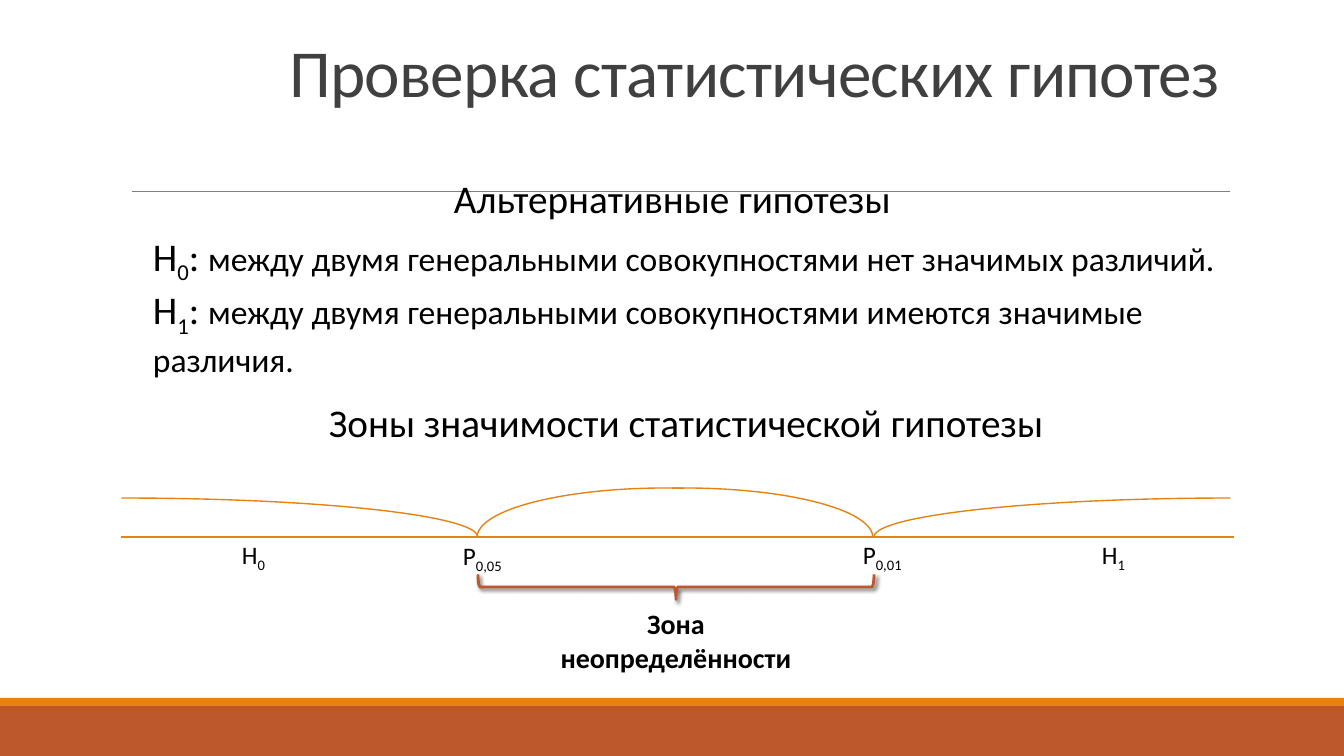
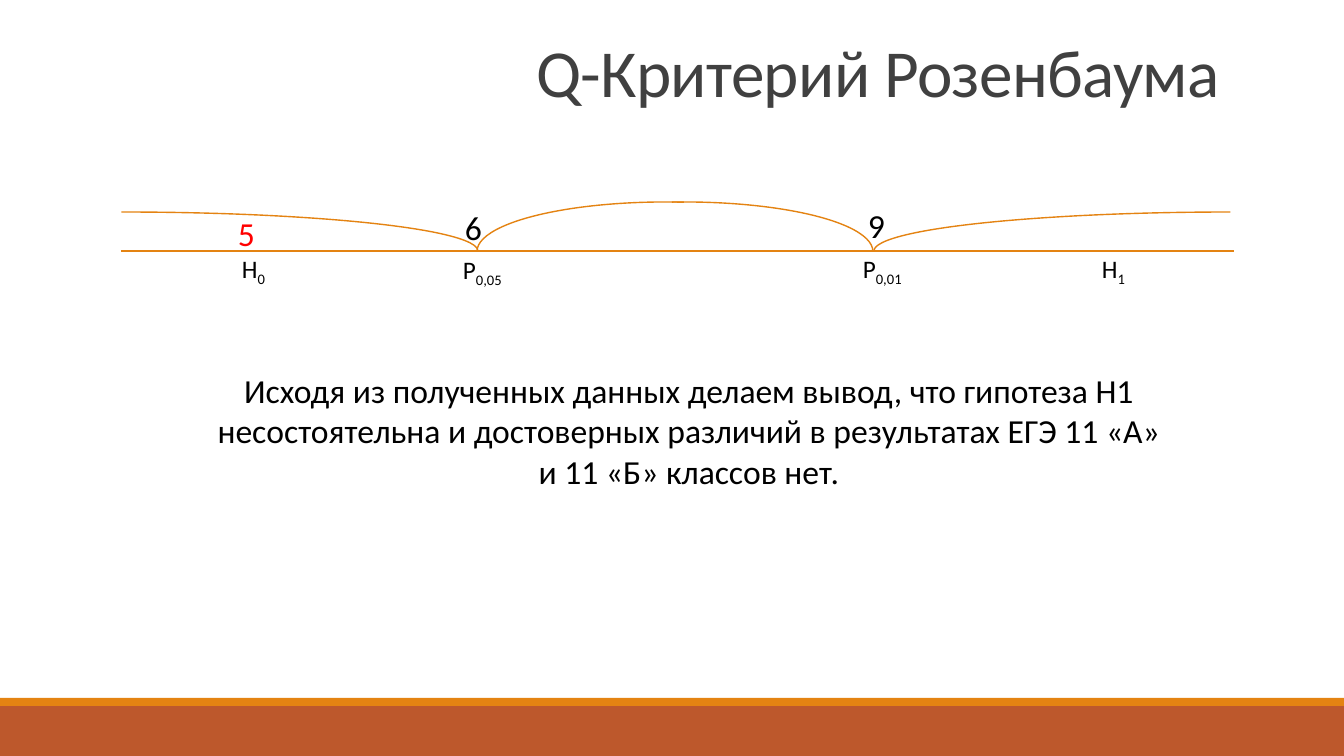
"""Builds two slides about testing statistical hypotheses."""
from pptx import Presentation
from pptx.dml.color import RGBColor
from pptx.enum.shapes import MSO_CONNECTOR as Connector, MSO_SHAPE as Shape
from pptx.enum.text import MSO_ANCHOR as Anchor, PP_ALIGN as Align
from pptx.oxml.ns import qn
from pptx.util import Emu, Pt
from lxml.etree import SubElement

COLORS = {
    "rust": "BD582C",
    "orange": "E48312",
    "gray": "808080",
    "title": "404040",
    "text": "000000",
    "accent": "FF0000",
}
FONT = "Calibri"
EMU_PER_PX = 914400 / 100.8
WIDTH, HEIGHT = 1344, 756


def px(length):
    return Emu(round(length * EMU_PER_PX))


def rgb(name):
    return RGBColor.from_string(COLORS[name])


class SlideBuilder:
    def __init__(self):
        self.deck = Presentation()
        self.deck.slide_width, self.deck.slide_height = px(WIDTH), px(HEIGHT)
        self.page = None

    def start(self, title):
        self.page = self.deck.slides.add_slide(self.deck.slide_layouts[6])
        self.band(706, 50, "rust")
        self.band(698, 8, "orange")
        box = self.text(121, 31, 1109, 85, [[(title, 48)]], "title", Align.RIGHT)
        box.text_frame.vertical_anchor = Anchor.BOTTOM
        para = box.text_frame.paragraphs[0]
        para.line_spacing = 0.85
        para.runs[0].font._element.set("spc", "-50")

    def shape(self, kind, left, top, width, height):
        shape = self.page.shapes.add_shape(kind, px(left), px(top), px(width), px(height))
        shape.shadow.inherit = False
        return shape

    def band(self, top, height, color):
        band = self.shape(Shape.RECTANGLE, 0, top, WIDTH, height)
        band.fill.solid()
        band.fill.fore_color.rgb = rgb(color)
        band.line.fill.background()

    def outline(self, kind, left, top, width, height, color, weight):
        shape = self.shape(kind, left, top, width, height)
        shape.fill.background()
        shape.line.color.rgb = rgb(color)
        shape.line.width = Pt(weight)
        return shape

    def line(self, left, right, y, color, weight):
        line = self.page.shapes.add_connector(
            Connector.STRAIGHT, px(left), px(y), px(right), px(y))
        line.line.color.rgb = rgb(color)
        line.line.width = Pt(weight)
        SubElement(line.element.spPr, qn("a:effectLst"))

    def arc(self, left, top, width, height, angles, flipped):
        arc = self.outline(Shape.ARC, left, top, width, height, "orange", 1)
        arc.adjustments[0], arc.adjustments[1] = angles
        if flipped:
            arc.element.spPr.find(qn("a:xfrm")).set("flipH", "1")

    def brace(self, center_x, center_y, length, depth):
        brace = self.outline(Shape.RIGHT_BRACE, center_x - depth / 2,
                             center_y - length / 2, depth, length, "rust", 2)
        brace.rotation = 90
        effects = brace.element.spPr.find(qn("a:effectLst"))
        shadow = SubElement(effects, qn("a:outerShdw"), blurRad=str(Pt(3)),
                            dist=str(Pt(2)), dir="2700000", rotWithShape="0")
        color = SubElement(shadow, qn("a:srgbClr"), val=COLORS["text"])
        SubElement(color, qn("a:alpha"), val="60000")

    def text(self, left, top, width, height, paragraphs, color="text",
             align=Align.LEFT, bold=False):
        box = self.page.shapes.add_textbox(px(left), px(top), px(width), px(height))
        frame = box.text_frame
        frame.word_wrap = True
        for index, runs in enumerate(paragraphs):
            para = frame.add_paragraph() if index else frame.paragraphs[0]
            para.alignment = align
            for content, size, *subscript in runs:
                span = para.add_run()
                span.text = content
                span.font.name = FONT
                span.font.size = Pt(size)
                span.font.bold = bold
                span.font.color.rgb = rgb(color)
                if subscript:
                    span.font._element.set("baseline", "-25000")
        return box

    def significance_axis(self, y):
        self.line(121, 1234, y, "orange", 1)
        for left, flipped in ((-235, False), (874, True)):
            self.arc(left, y - 39, 713, 78, (162, 215.9), flipped)
        for left, start, flipped in ((496, 153.39, False), (477, 149.75, True)):
            self.arc(left, y - 49, 377, 99, (start, 0), flipped)
        for left, drop, letter, index in ((232, 3, "H", "0"), (453, 2, "P", "0,05"),
                                          (853, 3, "P", "0,01"), (1092, 3, "H", "1")):
            self.text(left, y - drop, 80, 40, [[(letter, 18), (index, 18, True)]])


def hypothesis(index, statement):
    return [("H", 28), (index, 28, True), (": ", 28), (statement, 24)]


def main():
    builder = SlideBuilder()

    builder.start("Проверка статистических гипотез")
    builder.line(132, 1230, 191, "gray", 0.5)
    builder.text(143, 227, 1094, 146, [
        hypothesis("0", "между двумя генеральными совокупностями нет значимых различий."),
        hypothesis("1", "между двумя генеральными совокупностями имеются значимые различия."),
    ])
    builder.text(444, 169, 480, 58, [[("Альтернативные гипотезы", 28)]])
    builder.significance_axis(537)
    builder.text(319, 393, 760, 58, [[("Зоны значимости статистической гипотезы", 28)]])
    builder.brace(676, 587, 396, 25)
    builder.text(541, 602, 270, 78, [[("Зона неопределённости", 20)]],
                 align=Align.CENTER, bold=True)

    builder.start("Q-Критерий Розенбаума")
    builder.significance_axis(251)
    for left, top, value, color in ((858, 200, "9", "text"), (455, 202, "6", "text"),
                                    (228, 208, "5", "accent")):
        builder.text(left, top, 60, 50, [[(value, 24)]], color)
    conclusion = ("Исходя из полученных данных делаем вывод, что гипотеза Н1 "
                  "несостоятельна и достоверных различий в результатах ЕГЭ 11 «А» "
                  "и 11 «Б» классов нет.")
    builder.text(204, 365, 970, 132, [[(conclusion, 24)]], align=Align.CENTER)

    builder.deck.save("out.pptx")


if __name__ == "__main__":
    main()
